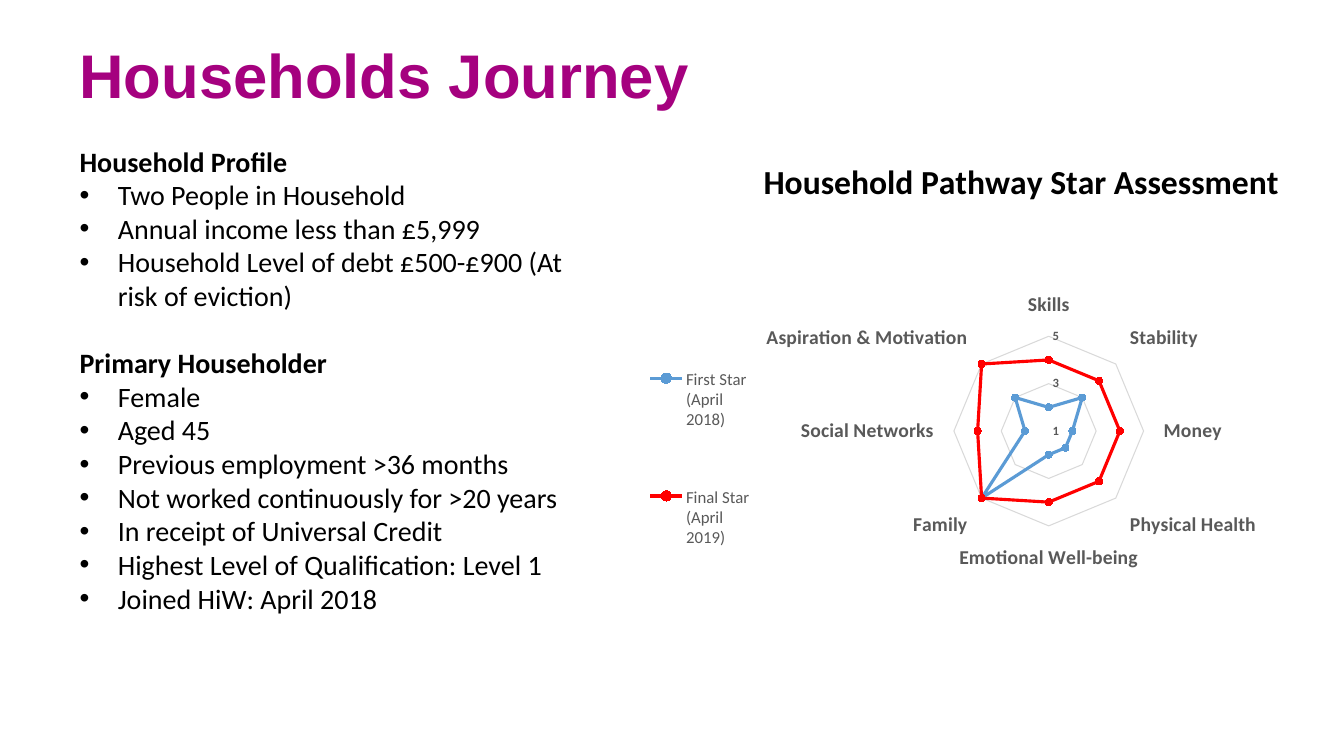
from lxml import etree
from pptx import Presentation
from pptx.chart.data import CategoryChartData
from pptx.dml.color import RGBColor
from pptx.enum.chart import XL_CHART_TYPE, XL_LEGEND_POSITION, XL_MARKER_STYLE, XL_TICK_MARK
from pptx.enum.text import MSO_ANCHOR
from pptx.oxml import parse_xml
from pptx.oxml.ns import nsdecls, qn
from pptx.util import Inches, Pt

RADAR = XL_CHART_TYPE.RADAR_MARKERS
LEGEND_TOP = XL_LEGEND_POSITION.TOP
CIRCLE = XL_MARKER_STYLE.CIRCLE
NO_TICK = XL_TICK_MARK.NONE
MIDDLE = MSO_ANCHOR.MIDDLE

COLORS = {
    "heading": "A5017F", "text": "000000", "label": "595959",
    "grid": "D9D9D9", "first": "5B9BD5", "final": "FF0000",
}
PROFILE = [
    ("Household Profile", [
        "Two People in Household",
        "Annual income less than £5,999",
        "Household Level of debt £500-£900 (At risk of eviction)",
    ]),
    ("Primary Householder", [
        "Female",
        "Aged 45",
        "Previous employment >36 months",
        "Not worked continuously for >20 years",
        "In receipt of Universal Credit",
        "Highest Level of Qualification: Level 1",
        "Joined HiW: April 2018",
    ]),
]
STAR_AREAS = ["Skills", "Stability", "Money", "Physical Health", "Emotional Well-being",
              "Family", "Social Networks", "Aspiration & Motivation"]
STARS = [
    ("First Star (April 2018)", [2, 3, 2, 2, 2, 5, 2, 3], "first"),
    ("Final Star (April 2019)", [4, 4, 4, 4, 4, 5, 4, 5], "final"),
]


def color(name):
    return RGBColor.from_string(COLORS[name])


def style_font(font, size, color_name, bold=False, face="Calibri"):
    font.name = face
    font.size = Pt(size)
    font.bold = bold
    font.color.rgb = color(color_name)


def style_line(line, color_name, width):
    line.color.rgb = color(color_name)
    line.width = Pt(width)


def add_text_frame(slide, box):
    frame = slide.shapes.add_textbox(*map(Inches, box)).text_frame
    frame.word_wrap = True
    return frame


def add_run(paragraph, text, *style):
    run = paragraph.add_run()
    run.text = text
    style_font(run.font, *style)


def add_bullet(paragraph):
    properties = paragraph._p.get_or_add_pPr()
    properties.set("marL", str(Inches(0.38)))
    properties.set("indent", str(-Inches(0.38)))
    etree.SubElement(properties, qn("a:buFont")).set("typeface", "Arial")
    etree.SubElement(properties, qn("a:buChar")).set("char", "•")


def add_heading(slide, box):
    frame = add_text_frame(slide, box)
    frame.vertical_anchor = MIDDLE
    heading = frame.paragraphs[0]
    heading.line_spacing = 0.9
    add_run(heading, "Households Journey", 44, "heading", True, "Arial")


def add_profile(slide, box):
    frame = add_text_frame(slide, box)
    for index, (topic, facts) in enumerate(PROFILE):
        subheading = frame.add_paragraph() if index else frame.paragraphs[0]
        if index:
            subheading.space_before = Pt(24)
        add_run(subheading, topic, 20, "text", True)
        for fact in facts:
            item = frame.add_paragraph()
            add_bullet(item)
            add_run(item, fact, 20, "text")


def make_layout(x, y, w=None, h=None, inner=False):
    """Manual layout in fractions of the chart area."""
    parts = ['<c:layoutTarget val="inner"/>'] if inner else []
    parts += [f'<c:{axis}Mode val="edge"/>' for axis in "xy"]
    parts += [f'<c:{key} val="{value}"/>' for key, value in zip("xywh", (x, y, w, h))
              if value is not None]
    return parse_xml(f'<c:layout {nsdecls("c")}><c:manualLayout>{"".join(parts)}'
                     '</c:manualLayout></c:layout>')


def place(element, layout, after=None):
    for old in element.findall(qn("c:layout")):
        element.remove(old)
    if after is None:
        element.insert(0, layout)
    else:
        element.find(qn(after)).addnext(layout)


def add_star_chart(slide, box):
    data = CategoryChartData()
    data.categories = STAR_AREAS
    for name, scores, _ in STARS:
        data.add_series(name, scores)
    chart = slide.shapes.add_chart(RADAR, *map(Inches, box), data).chart
    style_font(chart.font, 10, "text")

    # Title
    chart.has_title = True
    title = chart.chart_title
    add_run(title.text_frame.paragraphs[0], "Household Pathway Star Assessment", 24, "text", True)
    place(title._element, make_layout(0.17, 0.08), "c:tx")

    # Legend, stacked left of the star
    chart.has_legend = True
    legend = chart.legend
    legend.position = LEGEND_TOP
    legend.include_in_layout = False
    style_font(legend.font, 12, "label")
    place(legend._element, make_layout(0, 0.34, 0.17, 0.48), "c:legendPos")

    # Plot and axes
    place(chart._chartSpace.chart.plotArea, make_layout(0.46, 0.29, 0.28, 0.49, inner=True))
    areas, scale = chart.category_axis, chart.value_axis
    for axis, size in ((areas, 14), (scale, 9)):
        axis.major_tick_mark = axis.minor_tick_mark = NO_TICK
        style_font(axis.tick_labels.font, size, "label", True)
    areas.has_major_gridlines = False
    style_line(areas.format.line, "grid", 0.75)
    scale.minimum_scale, scale.maximum_scale, scale.major_unit = 1, 5, 2
    scale.has_major_gridlines = True
    style_line(scale.major_gridlines.format.line, "grid", 0.75)
    scale.format.line.fill.background()

    # Stars
    chart.plots[0].vary_by_categories = False
    for series, (_, _, color_name) in zip(chart.plots[0].series, STARS):
        series.smooth = False
        style_line(series.format.line, color_name, 2.25)
        marker = series.marker
        marker.style, marker.size = CIRCLE, 5
        marker.format.fill.solid()
        marker.format.fill.fore_color.rgb = color(color_name)
        style_line(marker.format.line, color_name, 0.75)


def main():
    deck = Presentation()
    deck.slide_width, deck.slide_height = Inches(13.33), Inches(7.5)
    slide = deck.slides.add_slide(deck.slide_layouts[6])
    add_heading(slide, (0.69, 0.05, 11.5, 1.45))
    add_profile(slide, (0.69, 1.38, 4.99, 5.18))
    add_star_chart(slide, (6.37, 1.03, 6.72, 6.07))
    deck.save("out.pptx")


if __name__ == "__main__":
    main()
